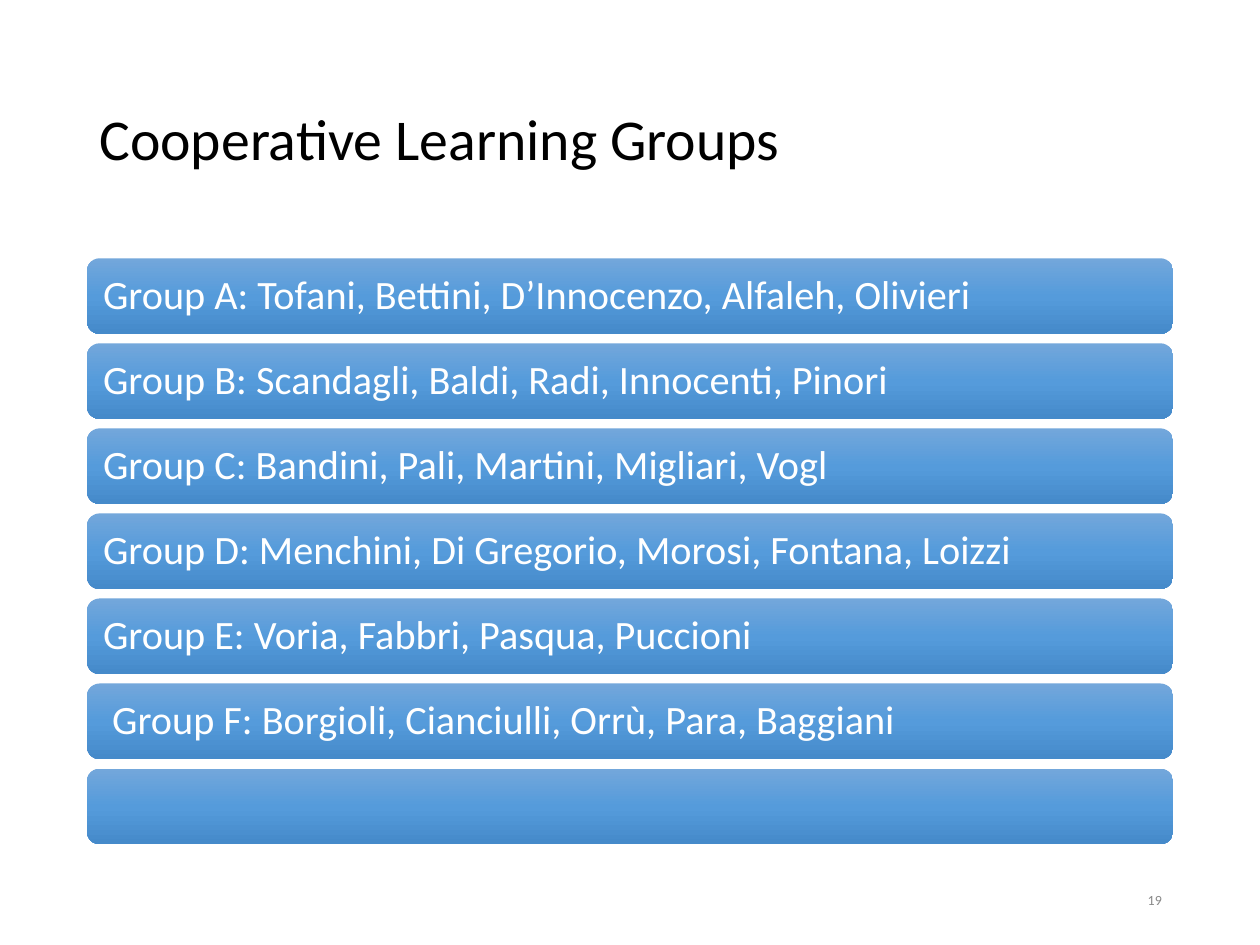
import copy

import pptx
import pptx.dml.color
import pptx.enum.shapes
import pptx.enum.text
import pptx.oxml.ns
import pptx.util

Inches = pptx.util.Inches
RGBColor = pptx.dml.color.RGBColor
PP_ALIGN = pptx.enum.text.PP_ALIGN

FONT = "Calibri"
BLACK = RGBColor(0x00, 0x00, 0x00)
WHITE = RGBColor(0xFF, 0xFF, 0xFF)
GREY = RGBColor(0x89, 0x89, 0x89)
BAR_BLUES = (
    RGBColor(0x73, 0xA7, 0xDB),
    RGBColor(0x55, 0x9B, 0xDB),
    RGBColor(0x45, 0x8A, 0xCA),
)

LEFT, WIDTH = 0.69, 8.62
FIRST_BAR_TOP, LAST_BAR_TOP, BAR_HEIGHT = 2.05, 6.1, 0.6

# The last bar is left empty.
GROUPS = (
    "Group A: Tofani, Bettini, D’Innocenzo, Alfaleh, Olivieri",
    "Group B: Scandagli, Baldi, Radi, Innocenti, Pinori",
    "Group C: Bandini, Pali, Martini, Migliari, Vogl",
    "Group D: Menchini, Di Gregorio, Morosi, Fontana, Loizzi",
    "Group E: Voria, Fabbri, Pasqua, Puccioni",
    " Group F: Borgioli, Cianciulli, Orrù, Para, Baggiani",
    "",
)


def write_line(frame, text, size, color, align=PP_ALIGN.LEFT):
    """Put one vertically centred line of text in a text frame."""
    frame.word_wrap = True
    frame.vertical_anchor = pptx.enum.text.MSO_ANCHOR.MIDDLE
    line = frame.paragraphs[0]
    line.text = text
    line.alignment = align
    line.line_spacing = 0.9
    line.font.name = FONT
    line.font.size = pptx.util.Pt(size)
    line.font.color.rgb = color


def add_label(slide, box, text, size, color, align=PP_ALIGN.LEFT):
    label = slide.shapes.add_textbox(*map(Inches, box))
    write_line(label.text_frame, text, size, color, align)


def fill_downward(shape, colors):
    """Fill a shape with three evenly spaced colours from top to bottom."""
    shape.fill.gradient()
    shape.fill.gradient_angle = 270
    stop_list = shape._element.spPr.find(".//" + pptx.oxml.ns.qn("a:gsLst"))
    stop_list.insert(1, copy.deepcopy(stop_list[0]))
    for index, (stop, color) in enumerate(zip(shape.fill.gradient_stops, colors)):
        stop.position = index / (len(colors) - 1)
        stop.color.rgb = color


def add_group_bar(slide, top, members):
    bar = slide.shapes.add_shape(
        pptx.enum.shapes.MSO_SHAPE.ROUNDED_RECTANGLE,
        Inches(LEFT), Inches(top), Inches(WIDTH), Inches(BAR_HEIGHT),
    )
    bar.shadow.inherit = False
    bar.line.fill.background()
    fill_downward(bar, BAR_BLUES)
    if members:
        bar.text_frame.margin_left = Inches(0.1)
        write_line(bar.text_frame, members, 23, WHITE)


def main():
    deck = pptx.Presentation()
    deck.slide_width, deck.slide_height = Inches(10), Inches(7.5)
    slide = deck.slides.add_slide(deck.slide_layouts[6])

    add_label(slide, (LEFT, 0.4, WIDTH, 1.45), "Cooperative Learning Groups", 33, BLACK)
    pitch = (LAST_BAR_TOP - FIRST_BAR_TOP) / (len(GROUPS) - 1)
    for row, members in enumerate(GROUPS):
        add_group_bar(slide, FIRST_BAR_TOP + row * pitch, members)
    add_label(slide, (7.07, 6.95, 2.25, 0.4), "19", 8, GREY, PP_ALIGN.RIGHT)

    deck.save("out.pptx")


if __name__ == "__main__":
    main()
